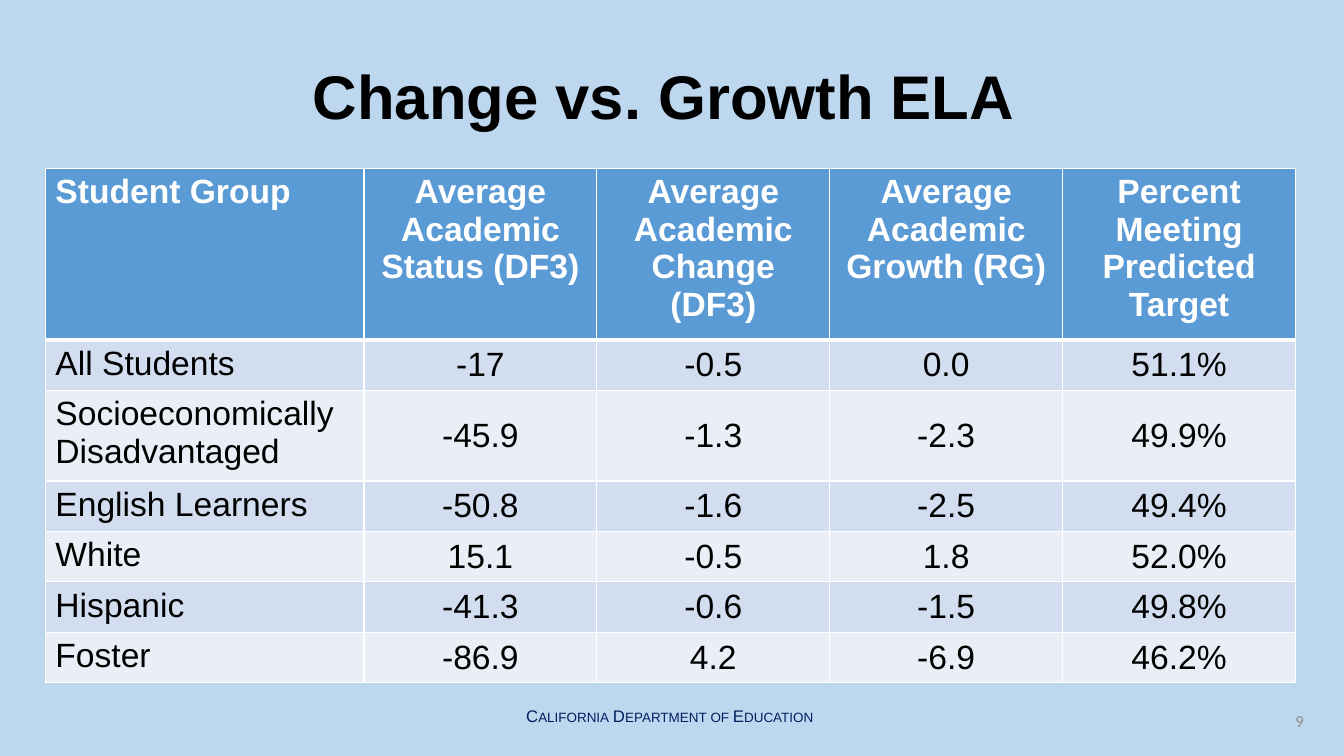
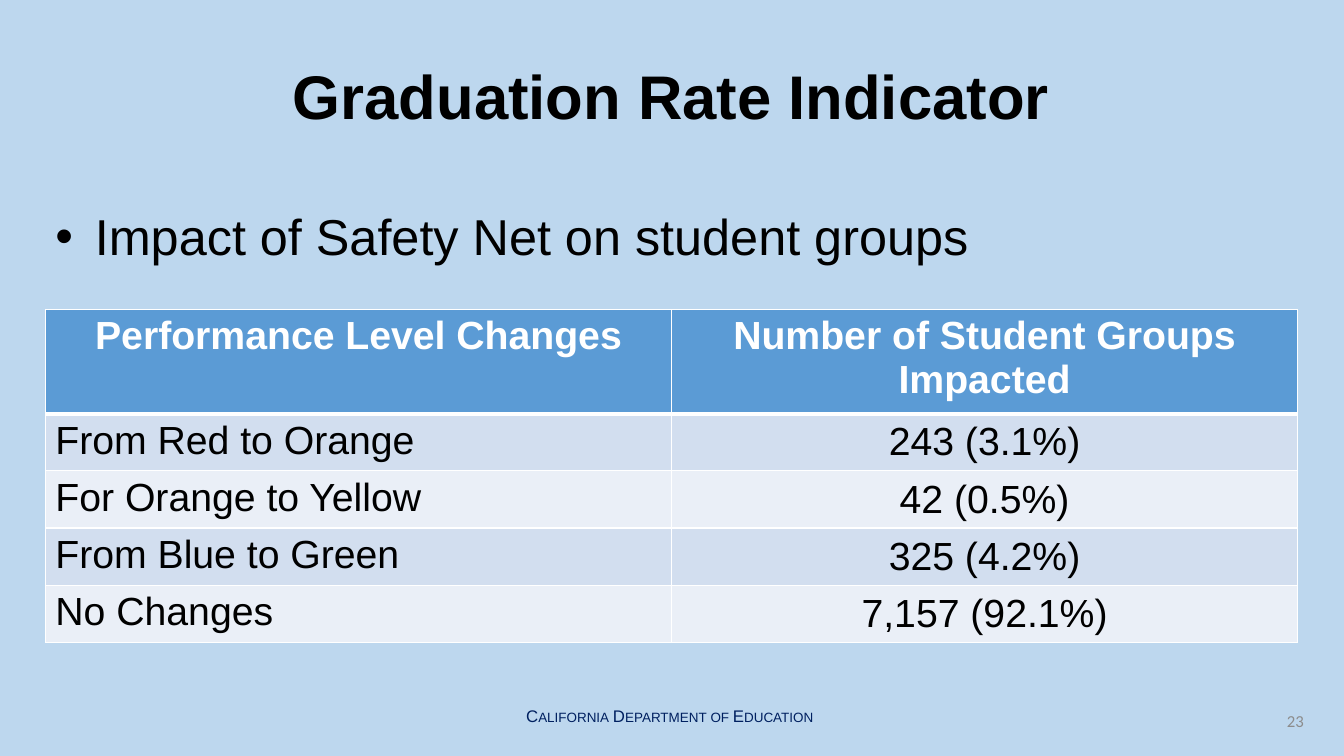
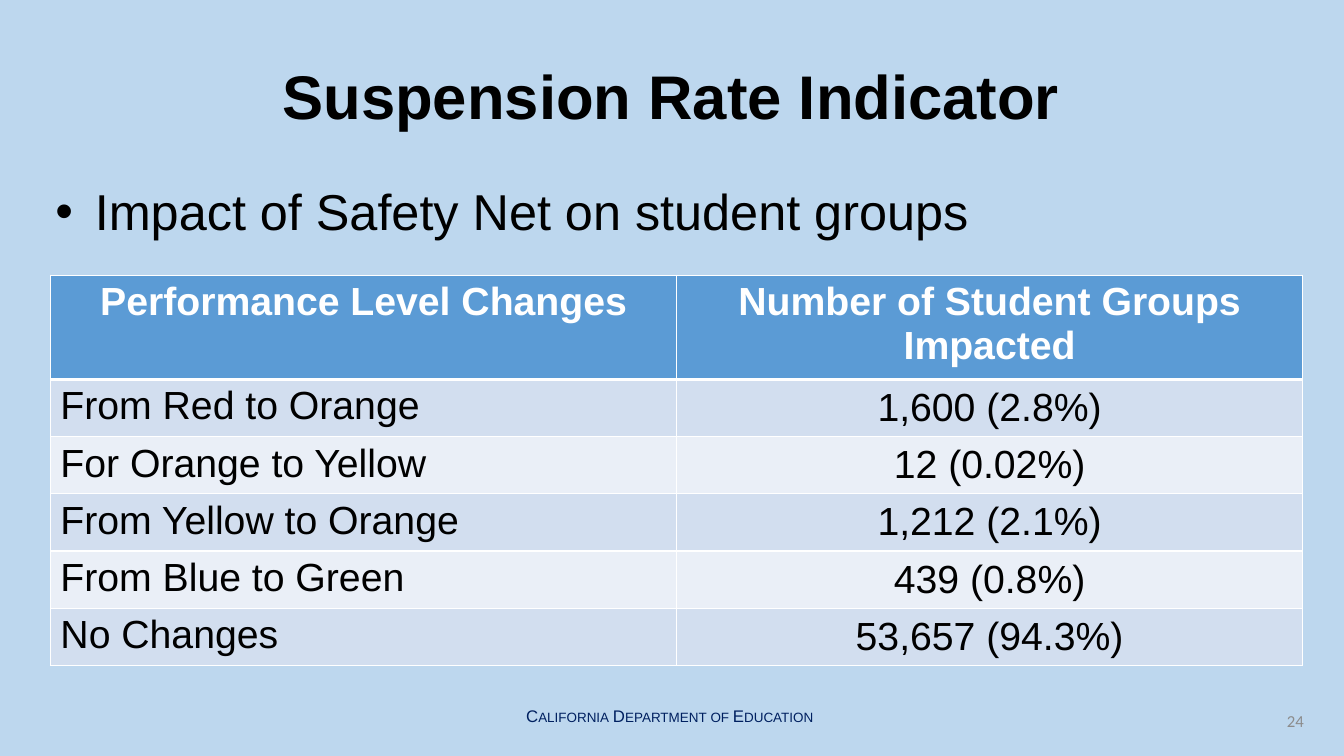
"""Build three accountability slides that share one background, title, footer and table style."""
from dataclasses import dataclass

from lxml.etree import SubElement
from pptx import Presentation
from pptx.dml.color import RGBColor
from pptx.enum.text import MSO_ANCHOR, PP_ALIGN
from pptx.oxml.ns import qn
from pptx.util import Inches, Pt


@dataclass(frozen=True)
class Theme:
    background: str = "BDD7EE"
    header: str = "5B9BD5"
    bands: tuple = ("D2DEEF", "EAEFF7")
    white: str = "FFFFFF"
    text: str = "000000"
    footer: str = "002060"
    number: str = "8C8C8C"
    font: str = "Arial"
    number_font: str = "Calibri"
    title_size: int = 44
    body_size: int = 36
    small_size: int = 12
    border: int = 1
    header_border: int = 3


THEME = Theme()
LEFT, WIDTH = 0.45, 12.42
FOOTER = "California Department of Education"
BULLET = "Impact of Safety Net on student groups"
IMPACT_HEADER = ("Performance Level Changes", "Number of Student Groups Impacted")

SLIDES = [
    {
        "title": "Change vs. Growth ELA ",
        "number": "9",
        "table": {
            "left": LEFT, "top": 1.67, "size": 24,
            "first_header": PP_ALIGN.LEFT,
            "columns": [3.16] + [2.31] * 4,
            "heights": [1.59, 0.47, 0.84] + [0.47] * 4,
            "rows": [
                ("Student Group", "Average\vAcademic Status (DF3)",
                 "Average\vAcademic Change (DF3)", "Average\vAcademic Growth (RG)",
                 "Percent Meeting Predicted Target"),
                ("All Students", "-17", "-0.5", "0.0", "51.1%"),
                ("Socioeconomically Disadvantaged", "-45.9", "-1.3", "-2.3", "49.9%"),
                ("English Learners", "-50.8", "-1.6", "-2.5", "49.4%"),
                ("White", "15.1", "-0.5", "1.8", "52.0%"),
                ("Hispanic", "-41.3", "-0.6", "-1.5", "49.8%"),
                ("Foster", "-86.9", "4.2", "-6.9", "46.2%"),
            ],
        },
    },
    {
        "title": "Graduation Rate Indicator",
        "number": "23",
        "bullet_top": 2.05,
        "table": {
            "left": LEFT, "top": 3.07, "size": 28,
            "first_header": PP_ALIGN.CENTER,
            "columns": [WIDTH / 2] * 2,
            "heights": [0.97] + [0.53] * 4,
            "rows": [
                IMPACT_HEADER,
                ("From Red to Orange", "243 (3.1%)"),
                ("For Orange to Yellow", "42 (0.5%)"),
                ("From Blue to Green", "325 (4.2%)"),
                ("No Changes", "7,157 (92.1%)"),
            ],
        },
    },
    {
        "title": "Suspension Rate Indicator",
        "number": "24",
        "bullet_top": 1.8,
        "table": {
            "left": 0.5, "top": 2.73, "size": 28,
            "first_header": PP_ALIGN.CENTER,
            "columns": [WIDTH / 2] * 2,
            "heights": [0.97] + [0.53] * 5,
            "rows": [
                IMPACT_HEADER,
                ("From Red to Orange", "1,600 (2.8%)"),
                ("For Orange to Yellow", "12 (0.02%)"),
                ("From Yellow to Orange", "1,212 (2.1%)"),
                ("From Blue to Green", "439 (0.8%)"),
                ("No Changes", "53,657 (94.3%)"),
            ],
        },
    },
]


def style(paragraph, size, color, align=PP_ALIGN.LEFT, bold=False, font=THEME.font):
    paragraph.alignment = align
    paragraph.font.size = Pt(size)
    paragraph.font.name = font
    paragraph.font.bold = bold
    paragraph.font.color.rgb = RGBColor.from_string(color)


def place(shape, left, top, width, height):
    shape.left, shape.top = Inches(left), Inches(top)
    shape.width, shape.height = Inches(width), Inches(height)


def add_label(slide, text, box, color, **options):
    label = slide.shapes.add_textbox(*map(Inches, box))
    label.text_frame.text = text
    style(label.text_frame.paragraphs[0], THEME.small_size, color, **options)
    return label


def add_master_footer(master, slide):
    footer = add_label(slide, FOOTER, (5.12, 6.95, 3.09, 0.3), THEME.footer)
    footer.text_frame.word_wrap = False
    footer.text_frame.paragraphs[0].runs[0]._r.get_or_add_rPr().set("cap", "small")
    footer.element.xpath("./p:nvSpPr/p:cNvPr")[0].set("id", "20")
    master.shapes.element.append(footer.element)


def set_title(slide, text):
    title = slide.shapes.title
    place(title, LEFT, 0.18, WIDTH, 1.62)
    title.text_frame.text = text
    title.text_frame.vertical_anchor = MSO_ANCHOR.MIDDLE
    paragraph = title.text_frame.paragraphs[0]
    paragraph.line_spacing = 0.9
    style(paragraph, THEME.title_size, THEME.text, PP_ALIGN.CENTER, True)


def set_bullet(slide, top):
    body = slide.placeholders[1]
    place(body, LEFT, top, WIDTH, 1.62)
    body.text_frame.text = BULLET
    paragraph = body.text_frame.paragraphs[0]
    paragraph.line_spacing = 0.9
    paragraph.space_before = paragraph.space_after = Pt(6)
    style(paragraph, THEME.body_size, THEME.text)
    properties = paragraph._p.get_or_add_pPr()
    properties.set("marL", str(Inches(0.39)))
    properties.set("indent", str(-Inches(0.39)))


def set_borders(cell, top, bottom):
    properties = cell._tc.get_or_add_tcPr()
    sides = {"lnL": THEME.border, "lnR": THEME.border, "lnT": top, "lnB": bottom}
    for position, (side, width) in enumerate(sides.items()):
        line = SubElement(properties, qn(f"a:{side}"), w=str(Pt(width)))
        fill = SubElement(line, qn("a:solidFill"))
        SubElement(fill, qn("a:srgbClr"), val=THEME.white)
        properties.insert(position, line)


def format_cell(cell, text, row, column, size, first_header):
    is_header = row == 0
    cell.text = text
    cell.fill.solid()
    cell.fill.fore_color.rgb = RGBColor.from_string(
        THEME.header if is_header else THEME.bands[(row - 1) % 2])
    first_align = first_header if is_header else PP_ALIGN.LEFT
    style(cell.text_frame.paragraphs[0], size, THEME.white if is_header else THEME.text,
          PP_ALIGN.CENTER if column else first_align, is_header)
    cell.vertical_anchor = MSO_ANCHOR.MIDDLE if row and column else MSO_ANCHOR.TOP
    set_borders(cell, THEME.header_border if row == 1 else THEME.border,
                THEME.header_border if is_header else THEME.border)


def add_data_table(slide, content):
    rows, columns, heights = content["rows"], content["columns"], content["heights"]
    box = (content["left"], content["top"], sum(columns), sum(heights))
    table = slide.shapes.add_table(len(rows), len(columns), *map(Inches, box)).table
    for column, width in zip(table.columns, columns):
        column.width = Inches(width)
    for row, height in zip(table.rows, heights):
        row.height = Inches(height)
    for row, texts in enumerate(rows):
        for column, text in enumerate(texts):
            format_cell(table.cell(row, column), text, row, column,
                        content["size"], content["first_header"])


def add_slide(presentation, content):
    has_bullet = "bullet_top" in content
    slide = presentation.slides.add_slide(presentation.slide_layouts[1 if has_bullet else 5])
    set_title(slide, content["title"])
    number = add_label(slide, content["number"], (10.03, 6.95, 3, 0.4), THEME.number,
                       align=PP_ALIGN.RIGHT, font=THEME.number_font)
    number.text_frame.word_wrap = True
    number.text_frame.vertical_anchor = MSO_ANCHOR.MIDDLE
    if has_bullet:
        set_bullet(slide, content["bullet_top"])
    add_data_table(slide, content["table"])
    return slide


def main():
    presentation = Presentation()
    presentation.slide_width, presentation.slide_height = Inches(13.33), Inches(7.5)
    master = presentation.slide_master
    master.background.fill.solid()
    master.background.fill.fore_color.rgb = RGBColor.from_string(THEME.background)
    slides = [add_slide(presentation, content) for content in SLIDES]
    add_master_footer(master, slides[0])
    presentation.save("out.pptx")


if __name__ == "__main__":
    main()
